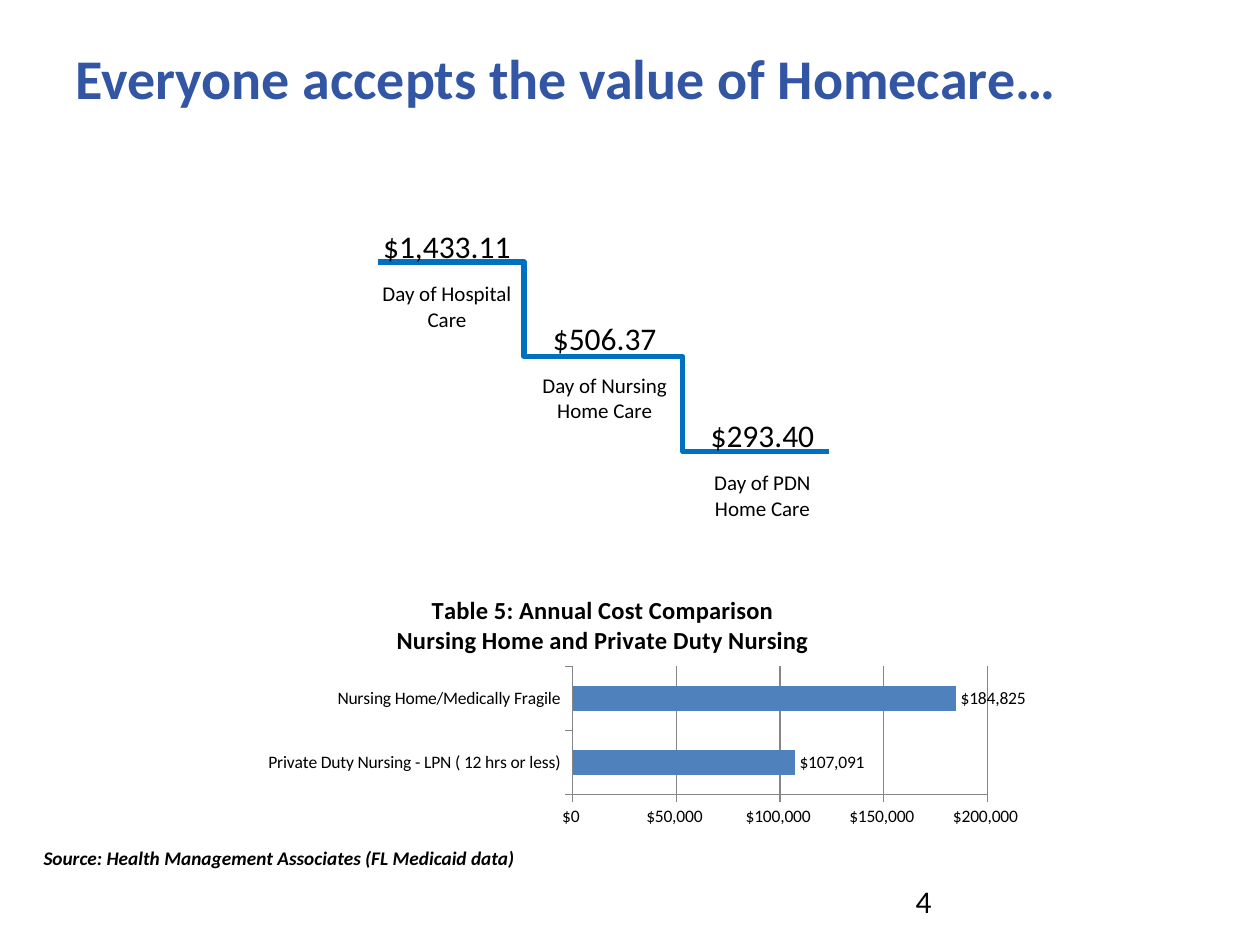
from dataclasses import dataclass

from lxml.etree import SubElement
from pptx import Presentation
from pptx.chart.chart import Chart
from pptx.chart.data import CategoryChartData
from pptx.dml.color import RGBColor
from pptx.enum.chart import XL_CHART_TYPE, XL_LABEL_POSITION, XL_TICK_MARK
from pptx.enum.shapes import MSO_CONNECTOR
from pptx.enum.text import PP_ALIGN
from pptx.oxml import parse_xml
from pptx.oxml.ns import nsdecls, qn
from pptx.slide import Slide
from pptx.util import Cm, Pt

FONT = "Calibri"
COLORS = {"title": "3255A4", "text": "000000", "stair": "0070C0",
          "bar": "4F81BD", "grid": "868686"}
DOLLARS = '"$"#,##0_);[Red]\\("$"#,##0\\)'
STEP_WIDTH = 3.18


@dataclass
class CareStep:
    amount: str
    care: str
    top: float


@dataclass
class Riser:
    left: float
    top: float
    bend: int


CARE_STEPS = [
    CareStep("$1,433.11", "Day of Hospital Care", 4.45),
    CareStep("$506.37", "Day of Nursing Home Care", 6.3),
    CareStep("$293.40", "Day of PDN Home Care", 8.26),
]
RISERS = [Riser(7.62, 5.28, 58000), Riser(11.63, 7.19, 42000)]
ANNUAL_COSTS = {
    "Private Duty Nursing - LPN ( 12 hrs or less)": 107091,
    "Nursing Home/Medically Fragile": 184825,
}


def color(name: str) -> RGBColor:
    """Look up a palette colour."""
    return RGBColor.from_string(COLORS[name])


def add_text(slide: Slide, text: str, *, left: float, top: float, width: float,
             height: float, size: float, tint: str = "text", bold: bool = False,
             italic: bool = False, align: PP_ALIGN = PP_ALIGN.LEFT) -> None:
    """Place one formatted paragraph, measured in centimetres."""
    frame = slide.shapes.add_textbox(
        Cm(left), Cm(top), Cm(width), Cm(height)).text_frame
    frame.word_wrap = True
    paragraph = frame.paragraphs[0]
    paragraph.alignment = align
    run = paragraph.add_run()
    run.text = text
    run.font.name = FONT
    run.font.size = Pt(size)
    run.font.bold = bold
    run.font.italic = italic
    run.font.color.rgb = color(tint)


def add_riser(slide: Slide, riser: Riser) -> None:
    """Draw one bent line of the staircase."""
    stair = slide.shapes.add_connector(
        MSO_CONNECTOR.ELBOW, Cm(riser.left), Cm(riser.top),
        Cm(riser.left + 5.08), Cm(riser.top + 1.91))
    stair.line.color.rgb = color("stair")
    stair.line.width = Pt(3)
    properties = stair._element.spPr
    bends = properties.find(qn("a:prstGeom")).get_or_add_avLst()
    SubElement(bends, qn("a:gd"), name="adj1", fmla=f"val {riser.bend}")
    SubElement(properties, qn("a:effectLst"))


def add_care_step(slide: Slide, index: int, step: CareStep) -> None:
    """Write an amount above its stair and the kind of care below."""
    left = 7.42 + index * STEP_WIDTH
    add_text(slide, step.amount, left=left, top=step.top, width=STEP_WIDTH,
             height=1.02, size=18, align=PP_ALIGN.CENTER)
    add_text(slide, step.care, left=left, top=step.top + 1.09, width=STEP_WIDTH,
             height=1.27, size=12, align=PP_ALIGN.CENTER)


def manual_layout(**fractions: float):
    """Build a chart layout from fractions of the chart area."""
    inner = '<c:layoutTarget val="inner"/>' if "w" in fractions else ""
    modes = "".join(f'<c:{axis}Mode val="edge"/>' for axis in "xy")
    sizes = "".join(f'<c:{key} val="{value}"/>' for key, value in fractions.items())
    return parse_xml(f'<c:layout {nsdecls("c")}><c:manualLayout>'
                     f'{inner}{modes}{sizes}</c:manualLayout></c:layout>')


def set_layout(parent, layout) -> None:
    """Put a layout in place of any existing one."""
    for existing in parent.findall(qn("c:layout")):
        parent.remove(existing)
    position = 1 if parent.find(qn("c:tx")) is not None else 0
    parent.insert(position, layout)


def add_chart_title(chart: Chart, lines: list[str]) -> None:
    """Write the chart title, one paragraph per line."""
    chart.has_title = True
    title = chart.chart_title
    frame = title.text_frame
    frame.text = "\n".join(lines)
    for paragraph in frame.paragraphs:
        for run in paragraph.runs:
            run.font.name = FONT
            run.font.size = Pt(14)
            run.font.bold = True
            run.font.color.rgb = color("text")
    title.include_in_layout = False
    set_layout(title._element, manual_layout(x=0.18, y=0.05))


def add_cost_chart(slide: Slide) -> None:
    """Compare the annual costs in a bar chart."""
    costs = CategoryChartData(number_format=DOLLARS)
    costs.categories = list(ANNUAL_COSTS)
    costs.add_series("Series 1", list(ANNUAL_COSTS.values()))
    chart = slide.shapes.add_chart(
        XL_CHART_TYPE.BAR_CLUSTERED, Cm(5.08), Cm(11.63), Cm(15.77), Cm(5.16),
        costs).chart
    chart.has_legend = False
    chart.font.name = FONT
    chart.font.size = Pt(10)
    chart.font.color.rgb = color("text")
    add_chart_title(chart, ["Table 5: Annual Cost Comparison",
                            "Nursing Home and Private Duty Nursing"])

    plot = chart.plots[0]
    plot.gap_width = 150
    plot.vary_by_categories = False
    bars = plot.series[0].format.fill
    bars.solid()
    bars.fore_color.rgb = color("bar")
    plot.has_data_labels = True
    labels = plot.data_labels
    labels.show_value = True
    labels.number_format = DOLLARS
    labels.number_format_is_linked = False
    labels.position = XL_LABEL_POSITION.OUTSIDE_END

    amounts = chart.value_axis
    amounts.minimum_scale = 0
    amounts.maximum_scale = 200000
    amounts.major_unit = 50000
    amounts.has_major_gridlines = True
    amounts.tick_labels.number_format = DOLLARS
    amounts.tick_labels.number_format_is_linked = False
    for axis in (amounts, chart.category_axis):
        axis.major_tick_mark = XL_TICK_MARK.OUTSIDE
        axis.minor_tick_mark = XL_TICK_MARK.NONE
        axis.format.line.color.rgb = color("grid")
    amounts.major_gridlines.format.line.color.rgb = color("grid")
    set_layout(chart._chartSpace.chart.plotArea,
               manual_layout(x=0.41, y=0.35, w=0.53, h=0.5))


def main() -> None:
    """Build the homecare cost slide."""
    deck = Presentation()
    deck.slide_width, deck.slide_height = Cm(25.4), Cm(19.05)
    slide = deck.slides.add_slide(deck.slide_layouts[6])
    add_text(slide, "Everyone accepts the value of Homecare…", left=1.27, top=0.76,
             width=22.86, height=3.18, size=32, tint="title", bold=True)
    add_text(slide, "4", left=18.21, top=17.65, width=5.92, height=1.02, size=18)
    add_cost_chart(slide)
    for riser in RISERS:
        add_riser(slide, riser)
    for index, step in enumerate(CARE_STEPS):
        add_care_step(slide, index, step)
    add_text(slide, "Source: Health Management Associates (FL Medicaid data)",
             left=0.23, top=16.94, width=10.8, height=0.74, size=11, bold=True,
             italic=True, align=PP_ALIGN.CENTER)
    deck.save("out.pptx")


if __name__ == "__main__":
    main()
